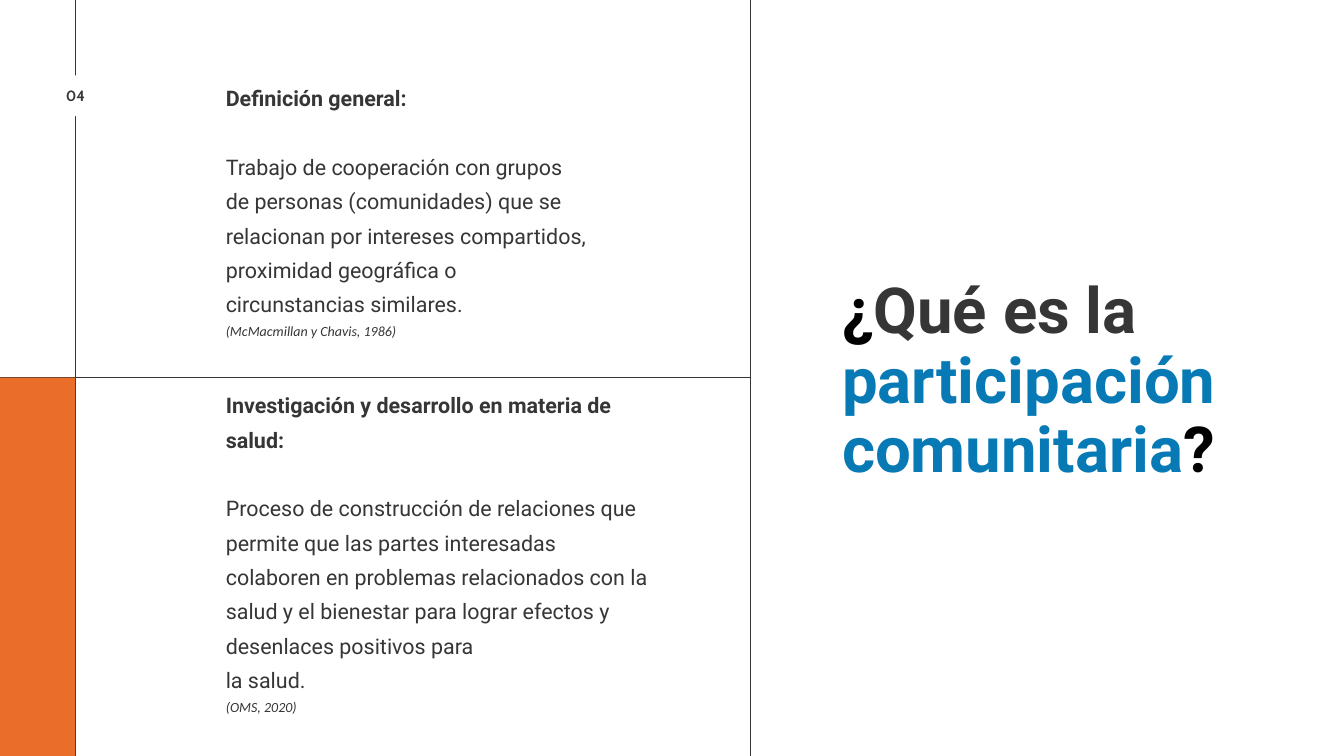
from pptx import Presentation
from pptx.dml.color import RGBColor
from pptx.enum.shapes import MSO_CONNECTOR, MSO_SHAPE
from pptx.enum.text import MSO_ANCHOR, MSO_AUTO_SIZE, PP_ALIGN
from pptx.oxml.ns import qn
from pptx.util import Inches, Pt
from lxml.etree import SubElement

COLORS = {
    "ink": "373636",
    "black": "000000",
    "white": "FFFFFF",
    "blue": "077AB5",
    "orange": "EA6D29",
}


def prepare_frame(holder):
    frame = holder.text_frame
    frame.margin_left = frame.margin_right = 0
    frame.margin_top = frame.margin_bottom = 0
    frame.auto_size = MSO_AUTO_SIZE.NONE
    frame.word_wrap = True
    frame.vertical_anchor = MSO_ANCHOR.TOP
    return frame


def write(paragraph, text, size=23, font="Roboto", color="ink", bold=False,
          italic=False, spacing=36.8, after=0, align=PP_ALIGN.LEFT):
    paragraph.alignment = align
    paragraph.line_spacing = Pt(spacing)
    paragraph.space_before = Pt(0)
    paragraph.space_after = Pt(after)
    for i, line in enumerate(text.split("\n")):
        if i:
            paragraph.add_line_break()
        run = paragraph.add_run()
        run.text = line
        run.font.size = Pt(size)
        run.font.name = font
        run.font.bold = bold
        run.font.italic = italic
        run.font.color.rgb = RGBColor.from_string(COLORS[color])


prs = Presentation()
prs.slide_width = Inches(20)
prs.slide_height = Inches(11.25)
slide = prs.slides.add_slide(prs.slide_layouts[5])
shapes = slide.shapes

# Dividing lines
for x1, y1, x2, y2 in [
    (1.12, 0, 1.12, 11.25),
    (0, 5.62, 11.16, 5.62),
    (11.16, 0, 11.16, 11.25),
]:
    divider = shapes.add_connector(
        MSO_CONNECTOR.STRAIGHT, Inches(x1), Inches(y1), Inches(x2), Inches(y2))
    divider.line.color.rgb = RGBColor.from_string(COLORS["ink"])
    divider.line.width = Pt(0.75)
    SubElement(divider._element.spPr, qn("a:effectLst"))

# Gap behind the page number, and orange corner block
for left, top, width, height, color in [
    (0.69, 1.12, 0.86, 0.61, "white"),
    (0, 5.62, 1.12, 5.63, "orange"),
]:
    block = shapes.add_shape(
        MSO_SHAPE.RECTANGLE, Inches(left), Inches(top), Inches(width), Inches(height))
    block.shadow.inherit = False
    block.fill.solid()
    block.fill.fore_color.rgb = RGBColor.from_string(COLORS[color])
    block.line.fill.background()

# Page number
page_number = shapes.add_textbox(Inches(0.76), Inches(1.31), Inches(0.73), Inches(0.25))
write(prepare_frame(page_number).paragraphs[0], "04", size=16, font="Cabin",
      bold=True, spacing=17.6, align=PP_ALIGN.CENTER)

# Title
title = shapes.title
title.left, title.top = Inches(12.53), Inches(4.11)
title.width, title.height = Inches(6.98), Inches(3.1)
question = prepare_frame(title).paragraphs[0]
for text, color in [
    ("¿", "black"),
    ("Qué es la ", "ink"),
    ("participación comunitaria", "blue"),
    ("?", "black"),
]:
    write(question, text, size=68, color=color, bold=True, spacing=74.8)

# Definitions: heading, body and source
definitions = [
    (1.14, 6.46, 3.93, "Definición general:",
     "Trabajo de cooperación con grupos \nde personas (comunidades) que se "
     "relacionan por intereses compartidos, proximidad geográfica o \n"
     "circunstancias similares.",
     "(McMacmillan y Chavis, 1986)"),
    (5.71, 6.29, 5.44, "Investigación y desarrollo en materia de salud:",
     "Proceso de construcción de relaciones que permite que las partes "
     "interesadas colaboren en problemas relacionados con la salud y el "
     "bienestar para lograr efectos y desenlaces positivos para \nla salud.",
     "(OMS, 2020)"),
]
for top, width, height, heading, body, source in definitions:
    definition = shapes.add_textbox(Inches(3.36), Inches(top), Inches(width), Inches(height))
    frame = prepare_frame(definition)
    write(frame.paragraphs[0], heading, bold=True, after=36.8)
    write(frame.add_paragraph(), body)
    write(frame.add_paragraph(), source, size=15, font="Calibri", italic=True, spacing=24)

prs.save("out.pptx")
